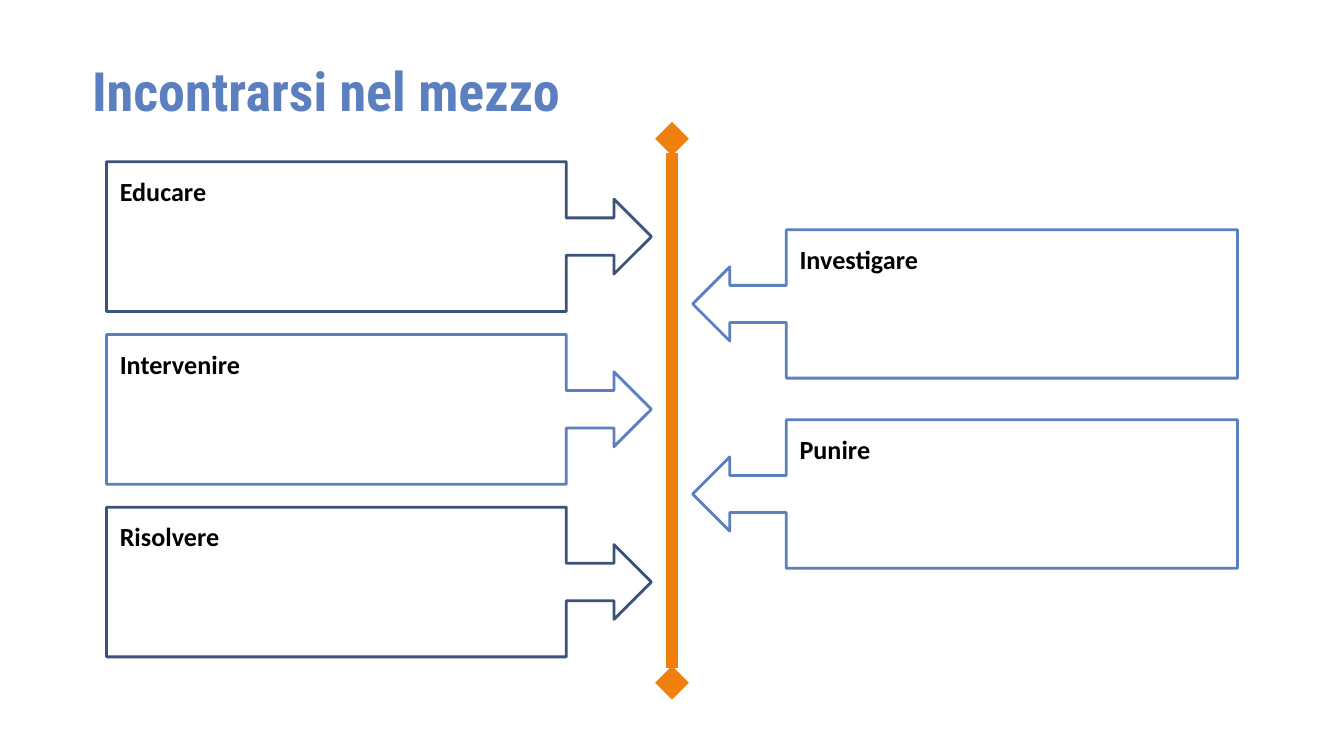
from lxml import etree
from pptx import Presentation
from pptx.dml.color import RGBColor
from pptx.enum.shapes import MSO_CONNECTOR, MSO_SHAPE
from pptx.enum.text import MSO_ANCHOR, PP_ALIGN
from pptx.oxml.ns import qn
from pptx.util import Inches, Pt

RIGHT = MSO_SHAPE.RIGHT_ARROW_CALLOUT
LEFT = MSO_SHAPE.LEFT_ARROW_CALLOUT
STRAIGHT = MSO_CONNECTOR.STRAIGHT
TOP, MIDDLE = MSO_ANCHOR.TOP, MSO_ANCHOR.MIDDLE
ALIGN = PP_ALIGN.LEFT

WIDTH = 10
HEIGHT = WIDTH * 9 / 16
COLS = 100
ROWS = COLS * 9 / 16
BLUE, NAVY, ORANGE, BLACK = "5B7FBF", "3B527B", "F0800E", "000000"


def color(code):
    return RGBColor.from_string(code)


def write(frame, text, font="Calibri", size=14, ink=BLACK, anchor=TOP,
          inset=(0.1, 0.1), spacing=1):
    frame.word_wrap = True
    frame.vertical_anchor = anchor
    frame.margin_left = frame.margin_right = Inches(inset[0])
    frame.margin_top = frame.margin_bottom = Inches(inset[1])
    para = frame.paragraphs[0]
    para.alignment = ALIGN
    para.line_spacing = spacing
    run = para.add_run()
    run.text = text
    run.font.name = font
    run.font.size = Pt(size)
    run.font.bold = True
    run.font.color.rgb = color(ink)


class Deck:
    """Holds the style and current slide, placing items in grid columns and rows."""

    def __init__(self):
        self.show = Presentation()
        self.show.slide_width = Inches(WIDTH)
        self.show.slide_height = Inches(HEIGHT)
        self.slide = self.show.slides.add_slide(self.show.slide_layouts[5])

    def place(self, col, row):
        return Inches(col * WIDTH / COLS), Inches(row * HEIGHT / ROWS)

    def title(self, text, col, row, wide, high):
        shape = self.slide.shapes.title
        shape.left, shape.top = self.place(col, row)
        shape.width, shape.height = self.place(wide, high)
        write(shape.text_frame, text, font="Roboto Condensed", size=29, ink=BLUE,
              anchor=MIDDLE, inset=(0.07, 0.04), spacing=0.9)

    def axis(self, col, top, end):
        line = self.slide.shapes.add_connector(
            STRAIGHT, *self.place(col, top), *self.place(col, end))
        line.line.color.rgb = color(ORANGE)
        line.line.width = Pt(6)
        stroke = line.line._get_or_add_ln()
        for tag in ("a:headEnd", "a:tailEnd"):
            etree.SubElement(stroke, qn(tag)).set("type", "diamond")
        etree.SubElement(line._element.spPr, qn("a:effectLst"))

    def callout(self, kind, text, col, row, wide, high, share, edge):
        shape = self.slide.shapes.add_shape(
            kind, *self.place(col, row), *self.place(wide, high))
        for i, value in enumerate((0.25, 0.25, 0.25, share)):
            shape.adjustments[i] = value
        shape.shadow.inherit = False
        shape.fill.background()
        shape.line.color.rgb = color(edge)
        shape.line.width = Pt(1.5)
        write(shape.text_frame, text)


def main():
    deck = Deck()
    deck.title("Incontrarsi nel mezzo", 6.15, 3.65, 87.7, 6.7)
    deck.axis(50, 10.33, 50.8)
    sides = (
        (RIGHT, 7.93, 12.04, 12.85, 11.14, 27 / 32,
         (("Educare", NAVY), ("Intervenire", BLUE), ("Risolvere", NAVY))),
        (LEFT, 51.54, 17.1, 14.14, 11.04, 53 / 64,
         (("Investigare", BLUE), ("Punire", BLUE))),
    )
    for kind, col, top, step, high, share, items in sides:
        for i, (text, edge) in enumerate(items):
            deck.callout(kind, text, col, top + i * step, 40.54, high, share, edge)
    deck.show.save("out.pptx")


if __name__ == "__main__":
    main()
